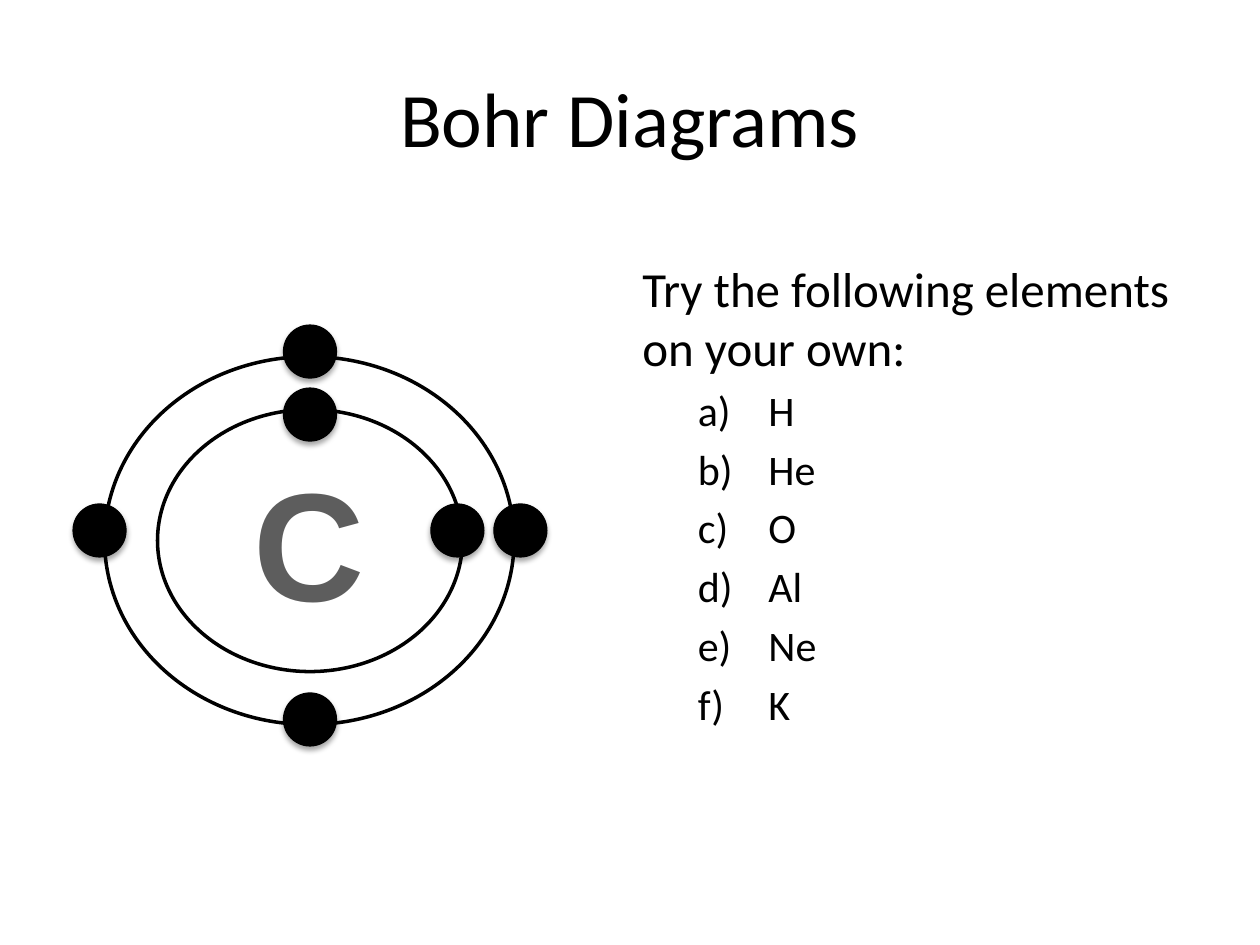
from dataclasses import dataclass

from lxml.etree import SubElement
from pptx import Presentation
from pptx.dml.color import RGBColor
from pptx.enum.shapes import MSO_SHAPE
from pptx.enum.text import MSO_ANCHOR, PP_ALIGN
from pptx.oxml.ns import qn
from pptx.util import Inches, Pt


@dataclass(frozen=True)
class Theme:
    black: RGBColor = RGBColor(0x00, 0x00, 0x00)
    white: RGBColor = RGBColor(0xFF, 0xFF, 0xFF)
    symbol_gray: RGBColor = RGBColor(0x5D, 0x5D, 0x5D)
    body_font: str = "Calibri"
    symbol_font: str = "Arial"
    title_size: int = 44
    prompt_size: int = 28
    element_size: int = 24
    symbol_size: int = 88
    shell_line: float = 2
    electron_line: float = 0.75


@dataclass(frozen=True)
class Box:
    left: float
    top: float
    width: float
    height: float

    def lengths(self) -> tuple:
        return tuple(Inches(v) for v in (self.left, self.top, self.width, self.height))


THEME = Theme()
ELECTRON_SIZE = 0.42
SHELLS = [Box(0.83, 2.83, 3.25, 2.92), Box(1.25, 3.25, 2.42, 2.08)]
ELECTRON_CORNERS = [
    (3.42, 4), (2.25, 3.08),
    (3.92, 4), (2.25, 2.58), (0.58, 4), (2.25, 5.5),
]
ELEMENTS = ["H", "He", "O", "Al", "Ne", "K"]


def add_ellipse(slide, box: Box, fill: RGBColor, line_width: float):
    shape = slide.shapes.add_shape(MSO_SHAPE.OVAL, *box.lengths())
    shape.shadow.inherit = False
    shape.fill.solid()
    shape.fill.fore_color.rgb = fill
    shape.line.color.rgb = THEME.black
    shape.line.width = Pt(line_width)
    return shape


def add_drop_shadow(shape) -> None:
    effects = shape._element.spPr.find(qn("a:effectLst"))
    shadow = SubElement(
        effects, qn("a:outerShdw"), blurRad=str(Pt(3.1)), dist=str(Pt(1.8)),
        dir="5400000", rotWithShape="0",
    )
    color = SubElement(shadow, qn("a:srgbClr"), val=str(THEME.black))
    SubElement(color, qn("a:alpha"), val="35000")


def add_text_frame(slide, box: Box, anchor=MSO_ANCHOR.TOP):
    text_frame = slide.shapes.add_textbox(*box.lengths()).text_frame
    text_frame.word_wrap = True
    text_frame.vertical_anchor = anchor
    return text_frame


def write(paragraph, text: str, size: int, color: RGBColor = THEME.black,
          font_name: str = THEME.body_font, bold: bool = False) -> None:
    paragraph.text = text
    font = paragraph.runs[0].font
    font.size = Pt(size)
    font.name = font_name
    font.color.rgb = color
    font.bold = bold


def letter_bullet(paragraph) -> None:
    """Number the paragraph a), b), c) with a hanging indent."""
    paragraph.level = 1
    properties = paragraph._p.get_or_add_pPr()
    properties.set("marL", str(Inches(1)))
    properties.set("indent", str(Inches(-0.56)))
    SubElement(properties, qn("a:buFont"), typeface="+mj-lt")
    SubElement(properties, qn("a:buAutoNum"), type="alphaLcParenR")


def add_title(slide) -> None:
    text_frame = add_text_frame(slide, Box(0.5, 0.3, 9, 1.25), MSO_ANCHOR.MIDDLE)
    paragraph = text_frame.paragraphs[0]
    write(paragraph, "Bohr Diagrams", THEME.title_size)
    paragraph.alignment = PP_ALIGN.CENTER


def add_exercise(slide) -> None:
    text_frame = add_text_frame(slide, Box(5, 2, 4.42, 4.08))
    prompt = text_frame.paragraphs[0]
    write(prompt, "Try the following elements on your own:", THEME.prompt_size)
    prompt.space_before = Pt(THEME.prompt_size * 0.2)
    for element in ELEMENTS:
        paragraph = text_frame.add_paragraph()
        write(paragraph, element, THEME.element_size)
        paragraph.space_before = Pt(THEME.element_size * 0.2)
        letter_bullet(paragraph)


def add_symbol(slide) -> None:
    text_frame = add_text_frame(slide, Box(1.62, 3.5, 1.67, 1.58))
    paragraph = text_frame.paragraphs[0]
    write(paragraph, "C", THEME.symbol_size, THEME.symbol_gray, THEME.symbol_font, True)
    paragraph.alignment = PP_ALIGN.CENTER


def main() -> None:
    presentation = Presentation()
    presentation.slide_width = Inches(10)
    presentation.slide_height = Inches(7.5)
    slide = presentation.slides.add_slide(presentation.slide_layouts[6])

    for shell in SHELLS:
        add_ellipse(slide, shell, THEME.white, THEME.shell_line)
    add_title(slide)
    add_exercise(slide)
    for left, top in ELECTRON_CORNERS:
        box = Box(left, top, ELECTRON_SIZE, ELECTRON_SIZE)
        add_drop_shadow(add_ellipse(slide, box, THEME.black, THEME.electron_line))
    add_symbol(slide)
    presentation.save("out.pptx")


if __name__ == "__main__":
    main()
